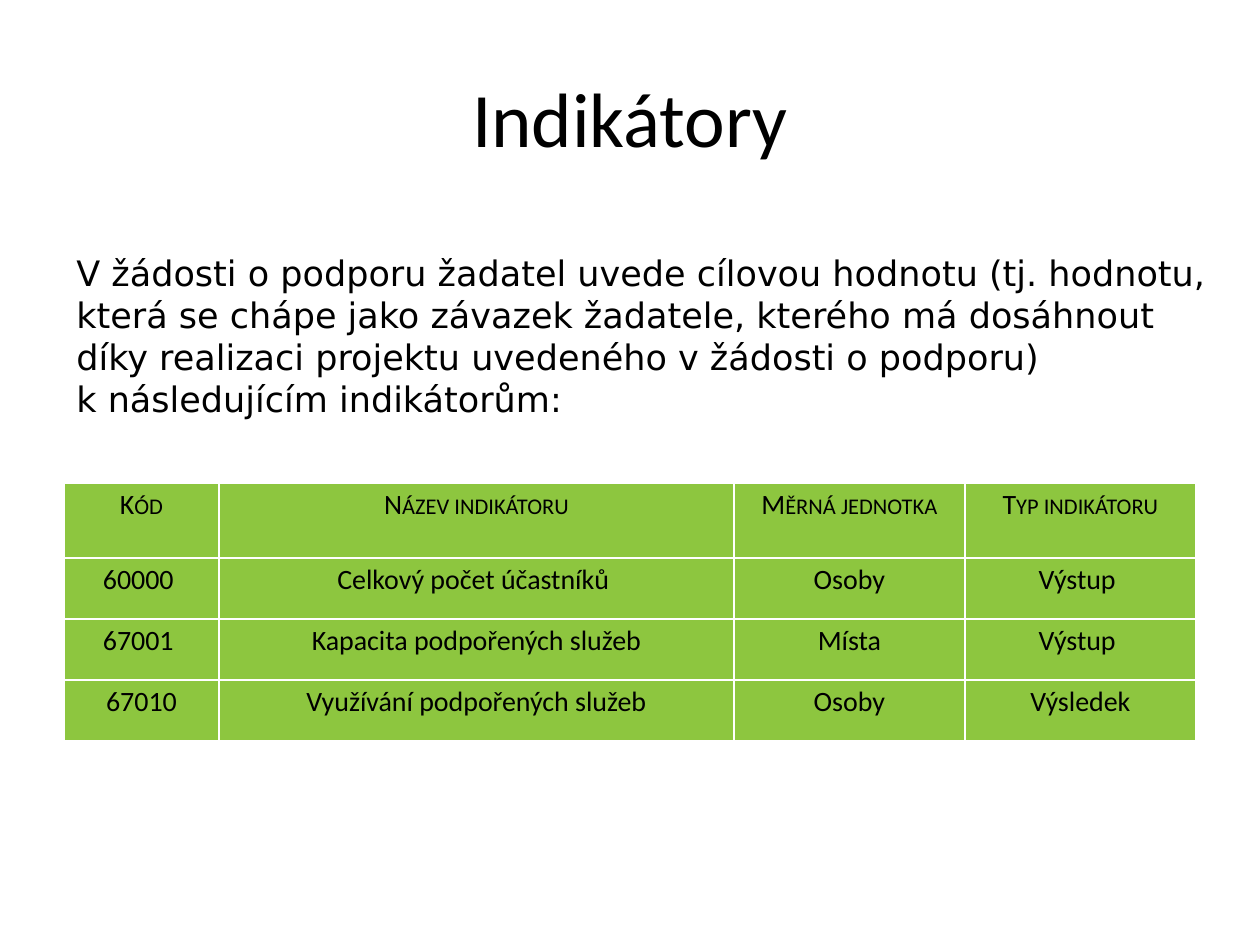
from lxml import etree
from pptx import Presentation
from pptx.dml.color import RGBColor
from pptx.enum.text import MSO_ANCHOR, PP_ALIGN
from pptx.oxml.ns import qn
from pptx.util import Pt

PX = 914400 // 126
CENTER = PP_ALIGN.CENTER
MIDDLE = MSO_ANCHOR.MIDDLE
COLORS = {"text": "000000", "cell": "8DC63F", "line": "FFFFFF"}


def style(para, font, size):
    for run in para.runs:
        run.font.name = font
        run.font.size = Pt(size)
        run.font.bold = False
        run.font.color.rgb = RGBColor.from_string(COLORS["text"])


def border(cell):
    """Fill the cell and draw a 1 pt line on all four sides."""
    props = cell._tc.get_or_add_tcPr()
    for side in ("lnL", "lnR", "lnT", "lnB"):
        line = etree.SubElement(props, qn("a:" + side), w=str(Pt(1)))
        fill = etree.SubElement(line, qn("a:solidFill"))
        etree.SubElement(fill, qn("a:srgbClr"), val=COLORS["line"])
    cell.fill.solid()
    cell.fill.fore_color.rgb = RGBColor.from_string(COLORS["cell"])


prs = Presentation()
prs.slide_width = 1260 * PX
prs.slide_height = 945 * PX
slide = prs.slides.add_slide(prs.slide_layouts[6])

# Title
title = slide.shapes.add_textbox(63 * PX, 38 * PX, 1134 * PX, 158 * PX).text_frame
title.word_wrap = True
title.vertical_anchor = MIDDLE
title.text = "Indikátory"
title.paragraphs[0].alignment = CENTER
style(title.paragraphs[0], "Calibri", 44)

# Indicator table
ROWS = [
    ["Kód", "Název indikátoru", "Měrná jednotka", "Typ indikátoru"],
    ["60000 ", "Celkový počet účastníků ", "Osoby", "Výstup "],
    ["67001 ", "Kapacita podpořených služeb", "Místa", "Výstup "],
    ["67010", "Využívání podpořených služeb", "Osoby", "Výsledek"],
]
WIDTHS = [155, 515, 231, 231]
HEIGHTS = [75, 61, 61, 61]

table = slide.shapes.add_table(
    len(ROWS), len(WIDTHS), 64 * PX, 483 * PX, sum(WIDTHS) * PX, sum(HEIGHTS) * PX
).table
table.horz_banding = False
for col, width in zip(table.columns, WIDTHS):
    col.width = width * PX
for row, height in zip(table.rows, HEIGHTS):
    row.height = height * PX

for r, words in enumerate(ROWS):
    for c, word in enumerate(words):
        cell = table.cell(r, c)
        cell.margin_left = cell.margin_right = 9 * PX
        cell.margin_top = cell.margin_bottom = 0
        cell.text_frame.text = word
        para = cell.text_frame.paragraphs[0]
        para.alignment = CENTER
        para.line_spacing = 1.15
        para.space_before = Pt(0 if r else 3)
        para.space_after = Pt(6 if r else 3)
        style(para, "Calibri", 16)
        if r == 0:
            para.runs[0].font._element.set("cap", "small")
        border(cell)

# Introduction
INTRO = [
    "V žádosti o podporu žadatel uvede cílovou hodnotu (tj. hodnotu,",
    "která se chápe jako závazek žadatele, kterého má dosáhnout",
    "díky realizaci projektu uvedeného v žádosti o podporu)",
    "k následujícím indikátorům:",
]
intro = slide.shapes.add_textbox(64 * PX, 245 * PX, 1172 * PX, 220 * PX).text_frame
intro.word_wrap = False
intro.text = "\n".join(INTRO)
for para in intro.paragraphs:
    style(para, "DejaVu Sans", 20)

prs.save("out.pptx")
